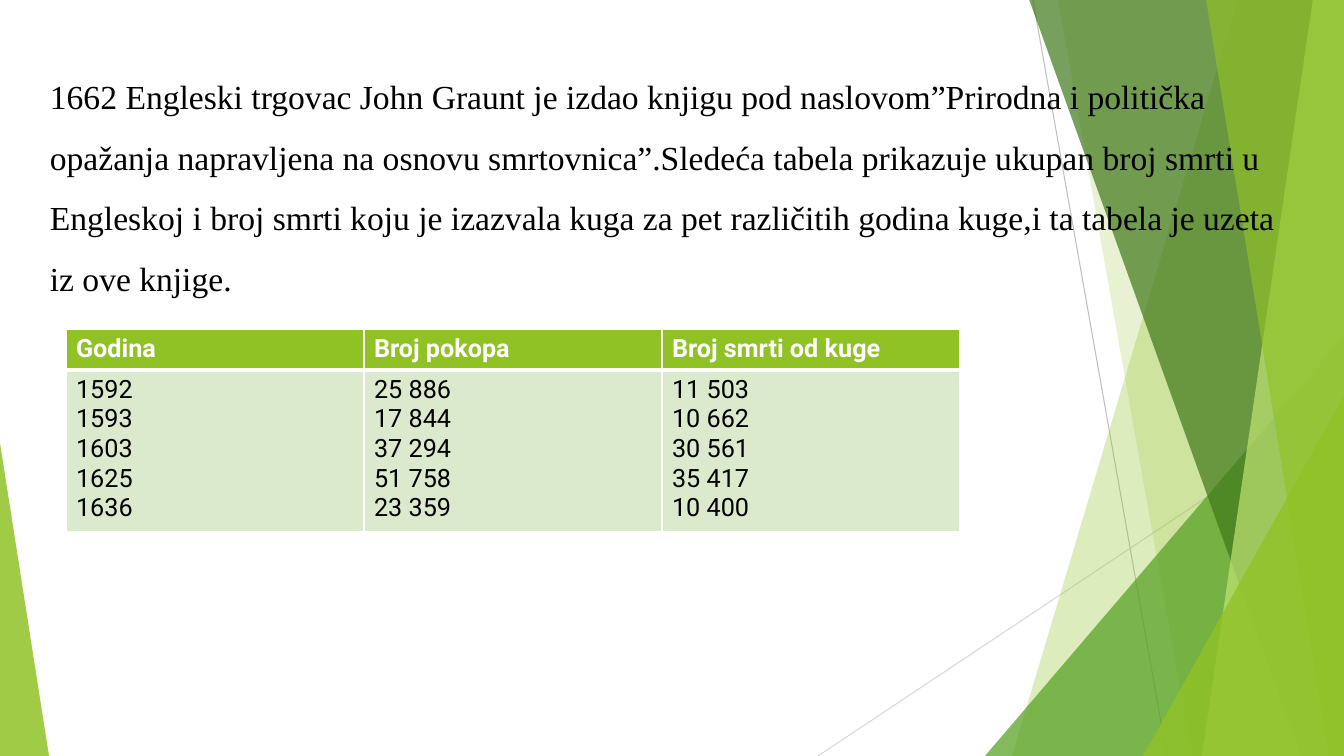
from lxml.etree import SubElement
from pptx import Presentation
from pptx.dml.color import RGBColor
from pptx.enum.shapes import MSO_CONNECTOR, MSO_SHAPE
from pptx.oxml.ns import qn
from pptx.util import Emu, Pt

INTRO = (
    "1662 Engleski trgovac John Graunt je izdao knjigu pod naslovom”Prirodna i politička "
    "opažanja napravljena na osnovu smrtovnica”.Sledeća tabela prikazuje ukupan broj smrti u "
    "Engleskoj i broj smrti koju je izazvala kuga za pet različitih godina kuge,i ta tabela "
    "je uzeta iz ove knjige."
)
HEADINGS = ["Godina", "Broj pokopa", "Broj smrti od kuge"]
PLAGUE_YEARS = [
    ("1592", "25 886", "11 503"),
    ("1593", "17 844", "10 662"),
    ("1603", "37 294", "30 561"),
    ("1625", "51 758", "35 417"),
    ("1636", "23 359", "10 400"),
]

# Lengths in px
WIDTH, HEIGHT = 1344, 756
INTRO_BOX = (40, 51, 1277, 254)
TABLE_LEFT, TABLE_TOP, COLUMN_WIDTH = 66, 329, 298
ROW_HEIGHTS = [41, 162]
RAYS = [((1033, 0), (1167, HEIGHT), "BFBFBF"), ((WIDTH, 406), (818, HEIGHT), "D9D9D9")]
# Back to front: a band has its left edge's top and bottom x, a triangle its box and apex
FACETS = [
    ("band", (1238, 1012), "90C226", 30),
    ("band", (1058, 1192), "90C226", 20),
    ("triangle", (985, 336, 359, 420, 1), "54A021", 72),
    ("band", (1029, 1301), "3F7819", 70),
    ("band", (1313, 1202), "C0E474", 70),
    ("band", (1206, 1329), "90C226", 65),
    ("triangle", (1143, 396, 201, 360, 1), "90C226", 80),
    ("triangle", (0, 443, 49, 313, 0), "90C226", 85),
]
SCALE = 12192000 / WIDTH


def px(length):
    return Emu(round(length * SCALE))


def color(code):
    return RGBColor.from_string(code)


def add_ray(page, start, end, code):
    ray = page.shapes.add_connector(MSO_CONNECTOR.STRAIGHT, *map(px, start + end))
    ray.line.color.rgb = color(code)
    ray.line.width = Pt(0.75)
    SubElement(ray._element.spPr, qn("a:effectLst"))


def add_facet(page, kind, geometry, code, opacity):
    if kind == "band":
        top_x, bottom_x = geometry
        outline = page.shapes.build_freeform(top_x, -1, scale=SCALE)
        outline.add_line_segments([(WIDTH, -1), (WIDTH, HEIGHT), (bottom_x, HEIGHT)])
        facet = outline.convert_to_shape()
    else:
        *frame, apex = geometry
        facet = page.shapes.add_shape(MSO_SHAPE.ISOSCELES_TRIANGLE, *map(px, frame))
        facet.adjustments[0] = apex
    facet.shadow.inherit = False
    facet.line.fill.background()
    facet.fill.solid()
    facet.fill.fore_color.rgb = color(code)
    tint = facet._element.spPr.find(".//" + qn("a:srgbClr"))
    SubElement(tint, qn("a:alpha"), val=str(opacity * 1000))


def add_intro(page):
    box = page.shapes.add_textbox(*map(px, INTRO_BOX))
    box.text_frame.word_wrap = True
    para = box.text_frame.paragraphs[0]
    para.text = INTRO
    para.line_spacing = 1.5
    para.font.size = Pt(24)
    para.font.name = "Times New Roman"
    para.font.color.rgb = color("000000")


def add_borders(cell, widths):
    """Draw white left, right, top and bottom borders of the given point widths."""
    properties = cell._tc.get_or_add_tcPr()
    for side, width in zip("LRTB", widths):
        border = SubElement(properties, qn(f"a:ln{side}"), w=str(Pt(width)))
        fill = SubElement(border, qn("a:solidFill"))
        SubElement(fill, qn("a:srgbClr"), val="FFFFFF")


def fill_cell(cell, lines, is_heading):
    add_borders(cell, (1, 1, 1, 3) if is_heading else (1, 1, 3, 1))
    cell.fill.solid()
    cell.fill.fore_color.rgb = color("90C226" if is_heading else "DBE9CD")
    cell.text = "\n".join(lines)
    for para in cell.text_frame.paragraphs:
        para.font.size = Pt(18)
        para.font.name = "Roboto"
        para.font.bold = is_heading
        para.font.color.rgb = color("FFFFFF" if is_heading else "000000")


def add_plague_table(page):
    frame = page.shapes.add_table(
        len(ROW_HEIGHTS), len(HEADINGS), px(TABLE_LEFT), px(TABLE_TOP),
        px(COLUMN_WIDTH * len(HEADINGS)), px(sum(ROW_HEIGHTS)),
    )
    table = frame.table
    for row, height in zip(table.rows, ROW_HEIGHTS):
        row.height = px(height)
    for index, (heading, values) in enumerate(zip(HEADINGS, zip(*PLAGUE_YEARS))):
        table.columns[index].width = px(COLUMN_WIDTH)
        fill_cell(table.cell(0, index), [heading], True)
        fill_cell(table.cell(1, index), values, False)


def main():
    deck = Presentation()
    deck.slide_width, deck.slide_height = px(WIDTH), px(HEIGHT)
    page = deck.slides.add_slide(deck.slide_layouts[6])
    for ray in RAYS:
        add_ray(page, *ray)
    for facet in FACETS:
        add_facet(page, *facet)
    add_intro(page)
    add_plague_table(page)
    deck.save("out.pptx")


if __name__ == "__main__":
    main()
